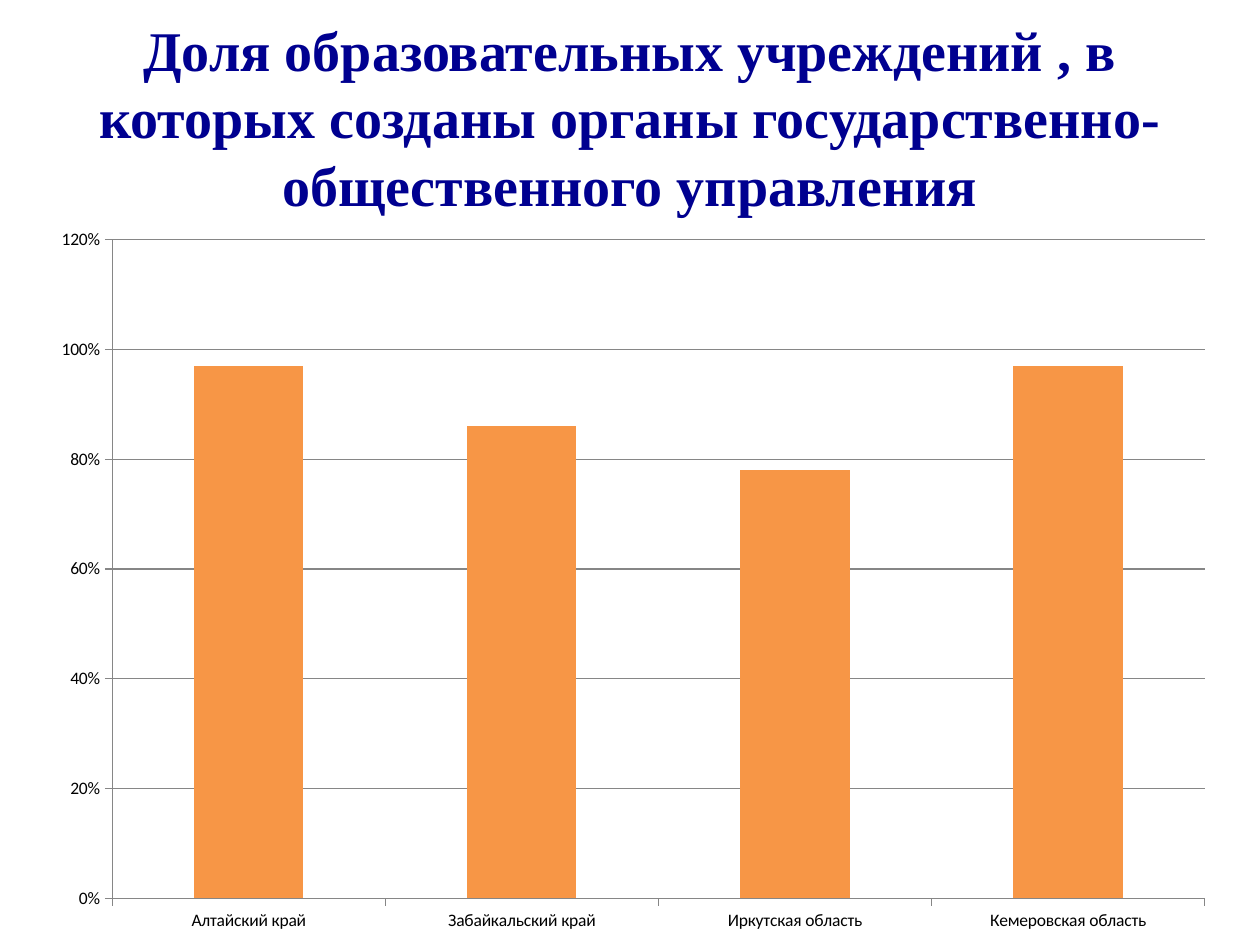
"""Build a slide with a titled column chart of regional shares."""
from pptx import Presentation
from pptx.chart.data import CategoryChartData
from pptx.dml.color import RGBColor
from pptx.enum.chart import XL_CHART_TYPE, XL_TICK_MARK
from pptx.enum.text import MSO_ANCHOR, PP_ALIGN
from pptx.util import Inches, Pt

COLORS = {"title": "000090", "bar": "F79646", "axis": "868686", "label": "000000"}
SHARES = {
    "Алтайский край": 0.97,
    "Забайкальский край": 0.86,
    "Иркутская область": 0.78,
    "Кемеровская область": 0.97,
}

presentation = Presentation()
presentation.slide_width, presentation.slide_height = Inches(10), Inches(7.5)
width, height = presentation.slide_width, presentation.slide_height
slide = presentation.slides.add_slide(presentation.slide_layouts[6])

title = slide.shapes.add_textbox(
    int(width * 0.05), int(height * 0.04), int(width * 0.9), int(height / 6)
)
title.text_frame.word_wrap = True
title.text_frame.vertical_anchor = MSO_ANCHOR.MIDDLE
paragraph = title.text_frame.paragraphs[0]
paragraph.alignment = PP_ALIGN.CENTER
run = paragraph.add_run()
run.text = (
    "Доля образовательных учреждений , в которых созданы органы "
    "государственно-общественного управления"
)
run.font.name = "Times New Roman"
run.font.size = Pt(32)
run.font.bold = True
run.font.color.rgb = RGBColor.from_string(COLORS["title"])

chart_data = CategoryChartData(number_format="0%")
chart_data.categories = list(SHARES)
chart_data.add_series("Series 1", list(SHARES.values()))
chart_top = int(height * 0.228)
chart = slide.shapes.add_chart(
    XL_CHART_TYPE.COLUMN_CLUSTERED,
    int(width * 0.03), chart_top, int(width * 0.945), height - chart_top,
    chart_data,
).chart
chart.has_title = False
chart.has_legend = False
chart.font.name = "Calibri"
chart.font.size = Pt(10)
chart.font.color.rgb = RGBColor.from_string(COLORS["label"])

plot = chart.plots[0]
plot.gap_width = 150
plot.vary_by_categories = False
bars = plot.series[0].format.fill
bars.solid()
bars.fore_color.rgb = RGBColor.from_string(COLORS["bar"])

value_axis = chart.value_axis
value_axis.minimum_scale, value_axis.maximum_scale = 0, 1.2
value_axis.major_unit = 0.2
value_axis.has_major_gridlines = True
value_axis.tick_labels.number_format = "0%"
value_axis.tick_labels.number_format_is_linked = False
for axis in (chart.category_axis, value_axis):
    axis.major_tick_mark = XL_TICK_MARK.OUTSIDE
    axis.minor_tick_mark = XL_TICK_MARK.NONE
for lined_part in (chart.category_axis, value_axis, value_axis.major_gridlines):
    lined_part.format.line.width = Pt(0.75)
    lined_part.format.line.color.rgb = RGBColor.from_string(COLORS["axis"])

presentation.save("out.pptx")
